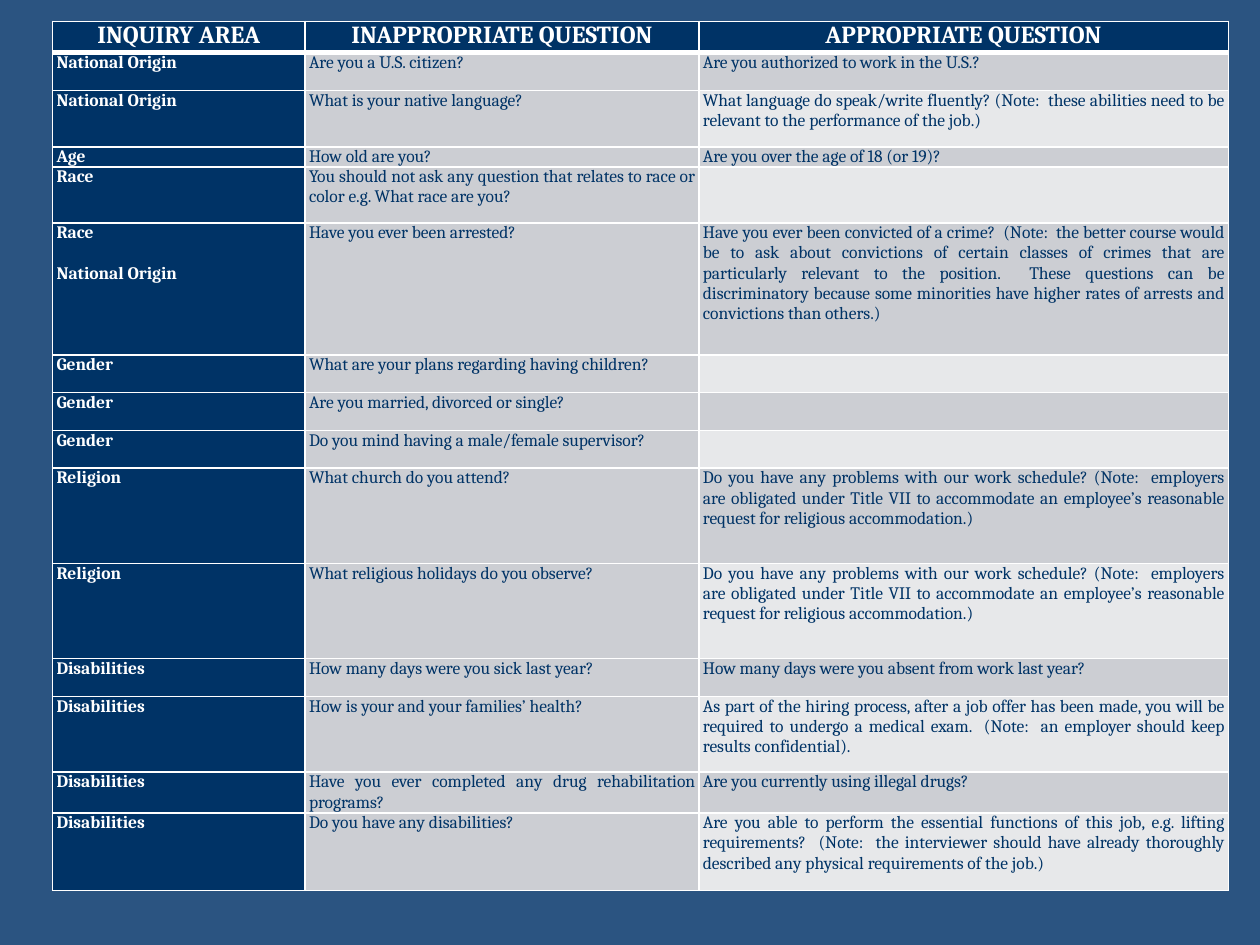
from lxml import etree
from pptx import Presentation
from pptx.dml.color import RGBColor
from pptx.enum.text import PP_ALIGN
from pptx.oxml.ns import qn
from pptx.util import Cm, Pt

CENTER, JUSTIFY = PP_ALIGN.CENTER, PP_ALIGN.JUSTIFY
NAVY, WHITE = "003366", "FFFFFF"
GREY, PALE = "CCCED3", "E7E8EA"
BLANK_LAYOUT = 6

COLUMN_WIDTHS = [5.09, 7.94, 10.67]
HEADINGS = ["INQUIRY AREA", "INAPPROPRIATE QUESTION", "APPROPRIATE QUESTION"]
HEADING_HEIGHT = 0.63
SCHEDULE = (
    "Do you have any problems with our work schedule? (Note:  employers are obligated "
    "under Title VII to accommodate an employee’s reasonable request for religious "
    "accommodation.)"
)
# Row height in cm, inquiry area, inappropriate question, appropriate question
QUESTIONS = [
    (0.76, "National Origin", "Are you a U.S. citizen?",
     "Are you authorized to work in the U.S.?"),
    (1.14, "National Origin", "What is your native language?",
     "What language do speak/write fluently? (Note:  these abilities need to be "
     "relevant to the performance of the job.)"),
    (0.38, "Age", "How old are you?", "Are you over the age of 18 (or 19)?"),
    (1.13, "Race",
     "You should not ask any question that relates to race or color e.g. What race are you?",
     ""),
    (2.66, "Race\nNational Origin", "Have you ever been arrested?",
     "Have you ever been convicted of a crime?  (Note:  the better course would be to ask "
     "about convictions of certain classes of crimes that are particularly relevant to the "
     "position.  These questions can be discriminatory because some minorities have higher "
     "rates of arrests and convictions than others.)"),
    (0.76, "Gender", "What are your plans regarding having children?", ""),
    (0.76, "Gender", "Are you married, divorced or single?", ""),
    (0.76, "Gender", "Do you mind having a male/female supervisor?", ""),
    (1.92, "Religion", "What church do you attend?", SCHEDULE),
    (1.92, "Religion", "What religious holidays do you observe?", SCHEDULE),
    (0.76, "Disabilities", "How many days were you sick last year?",
     "How many days were you absent from work last year?"),
    (1.53, "Disabilities", "How is your and your families’ health?",
     "As part of the hiring process, after a job offer has been made, you will be required "
     "to undergo a medical exam.  (Note:  an employer should keep results confidential)."),
    (0.82, "Disabilities", "Have you ever completed any drug rehabilitation programs?",
     "Are you currently using illegal drugs?"),
    (1.57, "Disabilities", "Do you have any disabilities?",
     "Are you able to perform the essential functions of this job, e.g. lifting "
     "requirements?  (Note:  the interviewer should have already thoroughly described any "
     "physical requirements of the job.)"),
]


def color(value):
    return RGBColor.from_string(value)


def write(frame, text, *, size=10, ink=NAVY, bold=False, align=JUSTIFY, font="Cambria", gap=12):
    """Fill a text frame, one paragraph per line of text."""
    for index, line in enumerate(text.split("\n")):
        para = frame.add_paragraph() if index else frame.paragraphs[0]
        para.alignment = align
        if index:
            para.space_before = Pt(gap)
        span = para.add_run()
        span.text = line
        span.font.name = font
        span.font.size = Pt(size)
        span.font.bold = bold
        span.font.color.rgb = color(ink)


def draw_borders(cell, bottom=1):
    properties = cell._tc.get_or_add_tcPr()
    for side, width in (("L", 1), ("R", 1), ("T", 1), ("B", bottom)):
        line = etree.SubElement(properties, qn(f"a:ln{side}"), w=str(Pt(width)))
        fill = etree.SubElement(line, qn("a:solidFill"))
        etree.SubElement(fill, qn("a:srgbClr"), val=WHITE)


class SlideBuilder:
    def __init__(self, deck, background):
        self.slide = deck.slides.add_slide(deck.slide_layouts[BLANK_LAYOUT])
        fill = self.slide.background.fill
        fill.solid()
        fill.fore_color.rgb = color(background)

    def cell(self, cell, text, fill, bottom=1, **style):
        cell.margin_left = cell.margin_right = Cm(0.08)
        cell.margin_top = cell.margin_bottom = 0
        draw_borders(cell, bottom)
        cell.fill.solid()
        cell.fill.fore_color.rgb = color(fill)
        write(cell.text_frame, text, **style)

    def question_table(self, left, top):
        heights = [HEADING_HEIGHT] + [row[0] for row in QUESTIONS]
        table = self.slide.shapes.add_table(
            len(heights), len(COLUMN_WIDTHS), Cm(left), Cm(top),
            Cm(sum(COLUMN_WIDTHS)), Cm(sum(heights))).table
        for column, width in zip(table.columns, COLUMN_WIDTHS):
            column.width = Cm(width)
        for row, height in zip(table.rows, heights):
            row.height = Cm(height)

        for column, heading in enumerate(HEADINGS):
            self.cell(table.cell(0, column), heading, NAVY, bottom=3,
                      size=14, ink=WHITE, bold=True, align=CENTER)
        for row, (_, area, wrong, right) in enumerate(QUESTIONS, start=1):
            self.cell(table.cell(row, 0), area, NAVY, ink=WHITE, bold=True)
            self.cell(table.cell(row, 1), wrong, GREY)
            self.cell(table.cell(row, 2), right, GREY if row % 2 else PALE)


def main():
    deck = Presentation()
    deck.slide_width, deck.slide_height = Cm(25.4), Cm(19.05)
    page = SlideBuilder(deck, background="2B5481")
    page.question_table(left=1.06, top=0.43)
    deck.save("out.pptx")


if __name__ == "__main__":
    main()
